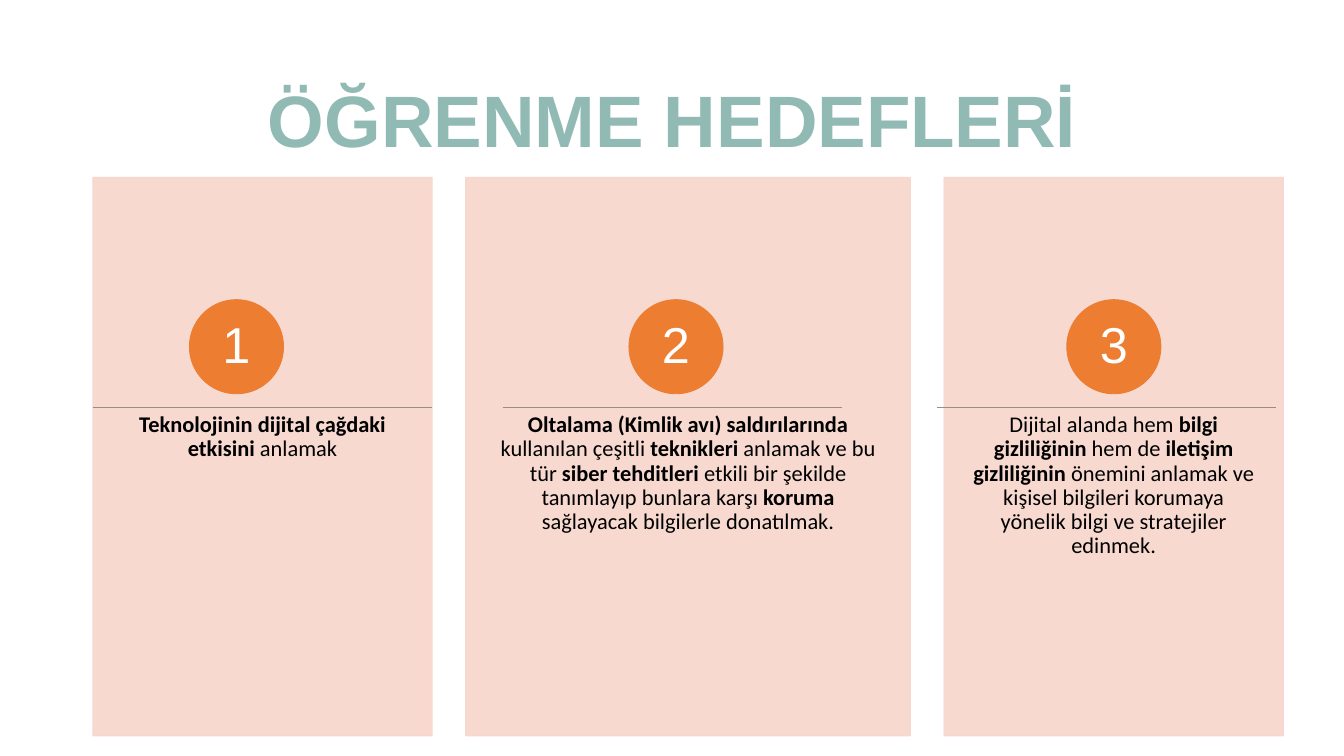
from lxml import etree
from pptx import Presentation
from pptx.dml.color import RGBColor
from pptx.enum.shapes import MSO_CONNECTOR, MSO_SHAPE
from pptx.enum.text import MSO_ANCHOR, PP_ALIGN
from pptx.oxml.ns import qn
from pptx.util import Pt

RECTANGLE, OVAL = MSO_SHAPE.RECTANGLE, MSO_SHAPE.OVAL
STRAIGHT = MSO_CONNECTOR.STRAIGHT
CENTER = PP_ALIGN.CENTER
TOP, MIDDLE = MSO_ANCHOR.TOP, MSO_ANCHOR.MIDDLE

TEAL = RGBColor(0x92, 0xBA, 0xB5)
PINK = RGBColor(0xF7, 0xD5, 0xCB)
ORANGE = RGBColor(0xED, 0x7D, 0x31)
GRAY = RGBColor(0x9C, 0x8C, 0x88)
BLACK = RGBColor(0, 0, 0)
WHITE = RGBColor(0xFF, 0xFF, 0xFF)

# Content: card width, circle left, rule left, then (text, bold) runs
TITLE = "ÖĞRENME HEDEFLERİ"
GOALS = [
    (363.6, 203, 99.4, [
        ("Teknolojinin dijital çağdaki etkisini ", True),
        ("anlamak", False),
    ]),
    (476.6, 673.9, 538.6, [
        ("Oltalama (Kimlik avı) saldırılarında ", True),
        ("kullanılan çeşitli ", False),
        ("teknikleri", True),
        (" anlamak ve bu tür ", False),
        ("siber tehditleri ", True),
        ("etkili bir şekilde tanımlayıp bunlara karşı ", False),
        ("koruma", True),
        (" sağlayacak bilgilerle donatılmak.", False),
    ]),
    (363.6, 1143, 1003.7, [
        ("Dijital alanda hem ", False),
        ("bilgi gizliliğinin ", True),
        ("hem de ", False),
        ("iletişim gizliliğinin ", True),
        ("önemini anlamak ve kişisel bilgileri korumaya yönelik bilgi ve "
         "stratejiler edinmek.", False),
    ]),
]

# Layout in points
LEFT, GAP = 99.4, 35.9
CARD_TOP, CARD_HEIGHT = 190.1, 598.3
CIRCLE_TOP, CIRCLE_SIZE = 321.1, 100.8
RULE_TOP, RULE_WIDTH = 436.3, 363.6
BODY_TOP, BODY_HEIGHT = 416.9, 358.6


def set_frame(frame, anchor, horizontal, vertical):
    frame.word_wrap = True
    frame.vertical_anchor = anchor
    frame.margin_left = frame.margin_right = Pt(horizontal)
    frame.margin_top = frame.margin_bottom = Pt(vertical)


def set_paragraph(paragraph, font_name, size, color):
    paragraph.alignment = CENTER
    paragraph.line_spacing = 0.9
    paragraph.font.name = font_name
    paragraph.font.size = Pt(size)
    paragraph.font.color.rgb = color


def add_filled(slide, kind, left, top, width, height, color):
    shape = slide.shapes.add_shape(kind, Pt(left), Pt(top), Pt(width), Pt(height))
    shape.shadow.inherit = False
    shape.fill.solid()
    shape.fill.fore_color.rgb = color
    shape.line.color.rgb = color
    shape.line.width = Pt(1)
    return shape


def add_card(slide, left, width):
    card = add_filled(slide, RECTANGLE, left, CARD_TOP, width, CARD_HEIGHT, PINK)
    for color in card._element.spPr.iter(qn("a:srgbClr")):
        etree.SubElement(color, qn("a:alpha"), val="90000")


def add_body(slide, left, width, runs):
    box = slide.shapes.add_textbox(Pt(left), Pt(BODY_TOP), Pt(width), Pt(BODY_HEIGHT))
    set_frame(box.text_frame, TOP, 28, 26)
    paragraph = box.text_frame.paragraphs[0]
    set_paragraph(paragraph, "Calibri", 24, BLACK)
    for text, bold in runs:
        run = paragraph.add_run()
        run.text = text
        run.font.bold = bold


def add_number(slide, left, number):
    circle = add_filled(slide, OVAL, left, CIRCLE_TOP, CIRCLE_SIZE, CIRCLE_SIZE, ORANGE)
    set_frame(circle.text_frame, MIDDLE, 0, 0)
    circle.text_frame.text = str(number)
    set_paragraph(circle.text_frame.paragraphs[0], "Arial", 54, WHITE)


def add_rule(slide, left):
    rule = slide.shapes.add_connector(
        STRAIGHT, Pt(left), Pt(RULE_TOP), Pt(left + RULE_WIDTH), Pt(RULE_TOP))
    rule.line.color.rgb = GRAY
    rule.line.width = Pt(1)
    etree.SubElement(rule._element.spPr, qn("a:effectLst"))


def main():
    presentation = Presentation()
    presentation.slide_width, presentation.slide_height = Pt(1440), Pt(810)
    slide = presentation.slides.add_slide(presentation.slide_layouts[5])

    # Title
    title = slide.shapes.title
    title.left, title.top = Pt(LEFT), Pt(65.5)
    title.width, title.height = Pt(1242), Pt(133.9)
    title.text_frame.text = TITLE
    set_frame(title.text_frame, MIDDLE, 7.2, 3.6)
    paragraph = title.text_frame.paragraphs[0]
    set_paragraph(paragraph, "Arial", 78, TEAL)
    paragraph.font.bold = True

    # Goal cards, left to right
    left = LEFT
    for number, (width, circle_left, rule_left, runs) in enumerate(GOALS, 1):
        add_card(slide, left, width)
        add_body(slide, left, width, runs)
        add_number(slide, circle_left, number)
        add_rule(slide, rule_left)
        left += width + GAP

    presentation.save("out.pptx")


if __name__ == "__main__":
    main()
